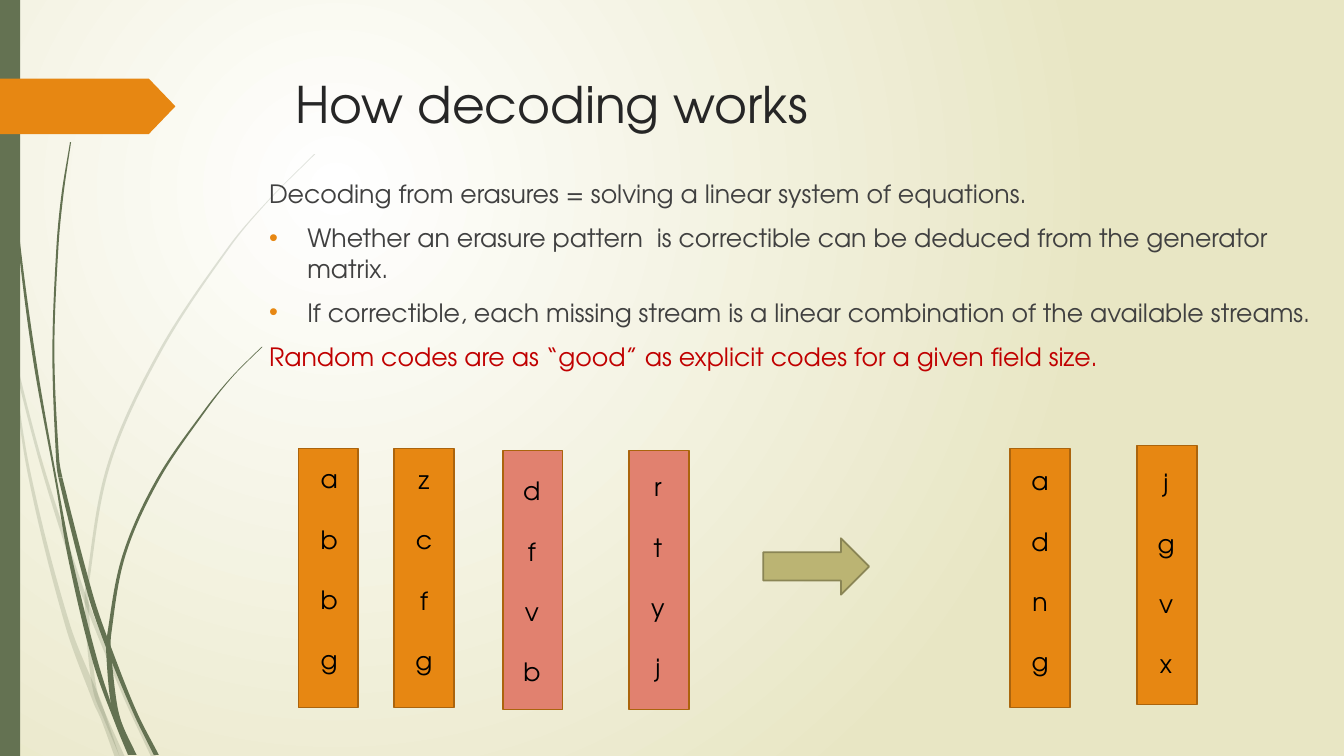
from dataclasses import dataclass

from lxml import etree
from pptx import Presentation
from pptx.dml.color import RGBColor
from pptx.enum.shapes import MSO_SHAPE
from pptx.enum.text import MSO_ANCHOR, PP_ALIGN
from pptx.oxml.ns import qn
from pptx.util import Pt

RECTANGLE = MSO_SHAPE.RECTANGLE
RIGHT_ARROW = MSO_SHAPE.RIGHT_ARROW
PENTAGON = MSO_SHAPE.PENTAGON
TOP = MSO_ANCHOR.TOP
LEFT = PP_ALIGN.LEFT
CENTER = PP_ALIGN.CENTER

EMU_PER_PX = 9144
TITLE_ONLY = 5
FONT = "TeX Gyre Adventor"
GREEN, ORANGE, CORAL = "647252", "E78712", "E1816F"
DARK_ORANGE, KHAKI, DARK_KHAKI = "AB640D", "BBB473", "8A8555"
TITLE_COLOR, BODY_COLOR, RED, BLACK = "262626", "404040", "C00000", "000000"

Knot = tuple[float, float, float]


@dataclass(frozen=True)
class Stream:
    left: int
    top: int
    label_left: int
    label_top: int
    letters: str
    color: str = ORANGE


@dataclass(frozen=True)
class BodyLine:
    text: str
    color: str = BODY_COLOR
    bulleted: bool = False


@dataclass(frozen=True)
class Blade:
    knots: tuple[Knot, ...]
    joints: tuple[int, ...]
    opacity: int = 100


STREAMS = (
    Stream(296, 445, 303, 455, "abbg"),
    Stream(391, 445, 397, 456, "zcfg"),
    Stream(499, 447, 504, 467, "dfvb", CORAL),
    Stream(624, 447, 629, 463, "rtyj", CORAL),
    Stream(1002, 445, 1008, 457, "adng"),
    Stream(1128, 442, 1133, 459, "jgvx"),
)

BODY = (
    BodyLine("Decoding from erasures = solving a linear system of equations."),
    BodyLine("Whether an erasure pattern  is correctible can be deduced from the generator matrix.", bulleted=True),
    BodyLine("If correctible, each missing stream is a linear combination of the available streams.", bulleted=True),
    BodyLine("Random codes are as “good” as explicit codes for a given field size.", RED),
)

BLADES = (
    Blade(((0, 290, 5), (7, 322, 4), (14, 355, 3), (38, 449, 3), (60, 521, 4),
           (86, 598, 4), (125, 693, 4), (152, 750, 5)), (2, 5), 20),
    Blade(((11, 350, 1), (29, 470, 3), (67, 620, 5), (97, 698, 8),
           (103, 713, 6), (116, 750, 5)), (3,), 20),
    Blade(((312, 153, 1), (268, 197, 1), (228, 244, 2), (159, 348, 3),
           (108, 461, 3), (86, 584, 3), (86, 598, 4), (89, 646, 4),
           (95, 688, 4), (104, 711, 4), (121, 750, 5)), (5, 6, 8, 9), 20),
    Blade(((3, 0, 1), (7, 110, 1), (18, 233, 2), (34, 355, 3), (56, 479, 2),
           (70, 556, 4), (95, 658, 5), (117, 721, 3), (129, 749, 4)), (4, 7)),
    Blade(((70, 141, 1), (62, 193, 2), (57, 245, 2), (53, 349, 2),
           (57, 453, 3), (60, 474, 4), (90, 591, 5), (108, 643, 5),
           (134, 707, 4), (155, 749, 5)), (5, 7)),
    Blade(((260, 344, 1), (231, 373, 1), (205, 405, 2), (157, 475, 3),
           (123, 551, 3), (108, 632, 4), (108, 650, 5), (113, 698, 6),
           (119, 719, 5), (133, 749, 5)), (5, 6, 8)),
)


def px(value: float) -> int:
    return round(value * EMU_PER_PX)


def rgb(color: str) -> RGBColor:
    return RGBColor.from_string(color)


def style(shape, fill: str, line: str | None = None) -> None:
    shape.shadow.inherit = False
    shape.fill.solid()
    shape.fill.fore_color.rgb = rgb(fill)
    if line is None:
        shape.line.fill.background()
    else:
        shape.line.color.rgb = rgb(line)
        shape.line.width = Pt(1.25)


def add_block(slide, kind, left: int, top: int, width: int, height: int,
              fill: str, line: str | None = None):
    shape = slide.shapes.add_shape(kind, px(left), px(top), px(width), px(height))
    style(shape, fill, line)
    return shape


def add_text_box(slide, left: int, top: int, width: int, height: int):
    box = slide.shapes.add_textbox(px(left), px(top), px(width), px(height))
    box.text_frame.word_wrap = True
    return box.text_frame


def write_text(paragraph, text: str, *, size: int = 18, color: str = BLACK,
               align=LEFT, space_before: float = 0) -> None:
    paragraph.alignment = align
    paragraph.space_before = Pt(space_before)
    run = paragraph.add_run()
    run.text = text
    run.font.name = FONT
    run.font.size = Pt(size)
    run.font.color.rgb = rgb(color)


def next_paragraph(frame, index: int):
    return frame.add_paragraph() if index else frame.paragraphs[0]


def add_bullet(paragraph) -> None:
    properties = paragraph._p.get_or_add_pPr()
    properties.set("marL", str(px(38)))
    properties.set("indent", str(px(-38)))
    bullet_color = etree.SubElement(properties, qn("a:buClr"))
    etree.SubElement(bullet_color, qn("a:srgbClr"), val=ORANGE)
    etree.SubElement(properties, qn("a:buFont"), typeface="Arial")
    etree.SubElement(properties, qn("a:buChar"), char="•")


def paint_background(slide) -> None:
    fill = slide.background.fill
    fill.gradient()
    for stop, color in zip(fill.gradient_stops, ("FFFFFF", "E8E6C4")):
        stop.color.rgb = rgb(color)
    gradient = next(slide._element.iter(qn("a:gradFill")))
    gradient.remove(gradient.find(qn("a:lin")))
    circle = etree.SubElement(gradient, qn("a:path"), path="circle")
    etree.SubElement(circle, qn("a:fillToRect"), l="50000", t="50000", r="100000", b="100000")


def curve_points(knots: tuple[Knot, ...]) -> list[Knot]:
    padded = (knots[0], *knots, knots[-1])
    slopes = [tuple((q - p) / (after[1] - before[1]) for p, q in zip(before, after))
              for before, after in zip(padded, padded[2:])]
    points = [knots[0]]
    for start, end, leaving, arriving in zip(knots, knots[1:], slopes, slopes[1:]):
        third = (end[1] - start[1]) / 3
        points += [tuple(p + s * third for p, s in zip(start, leaving)),
                   tuple(p - s * third for p, s in zip(end, arriving)), end]
    return points


def bend_lines(shape, curve_count: int) -> None:
    lines = list(shape._element.iter(qn("a:lnTo")))
    sides = (lines[:3 * curve_count], lines[3 * curve_count + 1:6 * curve_count + 1])
    for side in sides:
        for index in range(0, len(side), 3):
            curve = etree.Element(qn("a:cubicBezTo"))
            side[index].addprevious(curve)
            for line in side[index:index + 3]:
                curve.append(line[0])
                line.getparent().remove(line)


def add_blade(slide, blade: Blade) -> None:
    points = curve_points(blade.knots)
    ends = (0, *blade.joints, len(blade.knots) - 1)
    for first, last in zip(ends, ends[1:]):
        piece = points[3 * first:3 * last + 1]
        left_edge = [(px(x - width / 2), px(y)) for x, y, width in piece]
        right_edge = [(px(x + width / 2), px(y)) for x, y, width in piece]
        outline = left_edge + right_edge[::-1]
        builder = slide.shapes.build_freeform(*outline[0])
        builder.add_line_segments(outline[1:], close=True)
        shape = builder.convert_to_shape()
        bend_lines(shape, last - first)
        style(shape, GREEN)
        if blade.opacity < 100:
            color = shape._element.spPr.find(qn("a:solidFill"))[0]
            etree.SubElement(color, qn("a:alpha"), val=str(blade.opacity * 1000))


def add_title(slide) -> None:
    title = slide.shapes.title
    title.left, title.top, title.width, title.height = map(px, (283, 68, 975, 140))
    title.text_frame.vertical_anchor = TOP
    write_text(title.text_frame.paragraphs[0], "How decoding works", size=36, color=TITLE_COLOR)


def add_body(slide) -> None:
    frame = add_text_box(slide, 257, 172, 1054, 595)
    for index, line in enumerate(BODY):
        paragraph = next_paragraph(frame, index)
        write_text(paragraph, line.text, color=line.color, space_before=10 if index else 0)
        if line.bulleted:
            add_bullet(paragraph)


def add_stream(slide, stream: Stream) -> None:
    add_block(slide, RECTANGLE, stream.left, stream.top, 59, 257, stream.color, DARK_ORANGE)
    frame = add_text_box(slide, stream.label_left, stream.label_top, 47, 222)
    for index, letter in enumerate(stream.letters):
        write_text(next_paragraph(frame, index), letter, align=CENTER,
                   space_before=21.4 if index else 0)


def main() -> None:
    presentation = Presentation()
    presentation.slide_width, presentation.slide_height = px(1333), px(750)
    slide = presentation.slides.add_slide(presentation.slide_layouts[TITLE_ONLY])
    paint_background(slide)
    for blade in BLADES:
        add_blade(slide, blade)
    add_block(slide, RECTANGLE, 0, 0, 20, 750, GREEN)
    tag = add_block(slide, PENTAGON, 0, 78, 174, 55, ORANGE)
    tag.adjustments[0] = 0.48
    add_title(slide)
    add_body(slide)
    for stream in STREAMS:
        add_stream(slide, stream)
    add_block(slide, RIGHT_ARROW, 757, 534, 105, 56, KHAKI, DARK_KHAKI)
    presentation.save("out.pptx")


if __name__ == "__main__":
    main()
